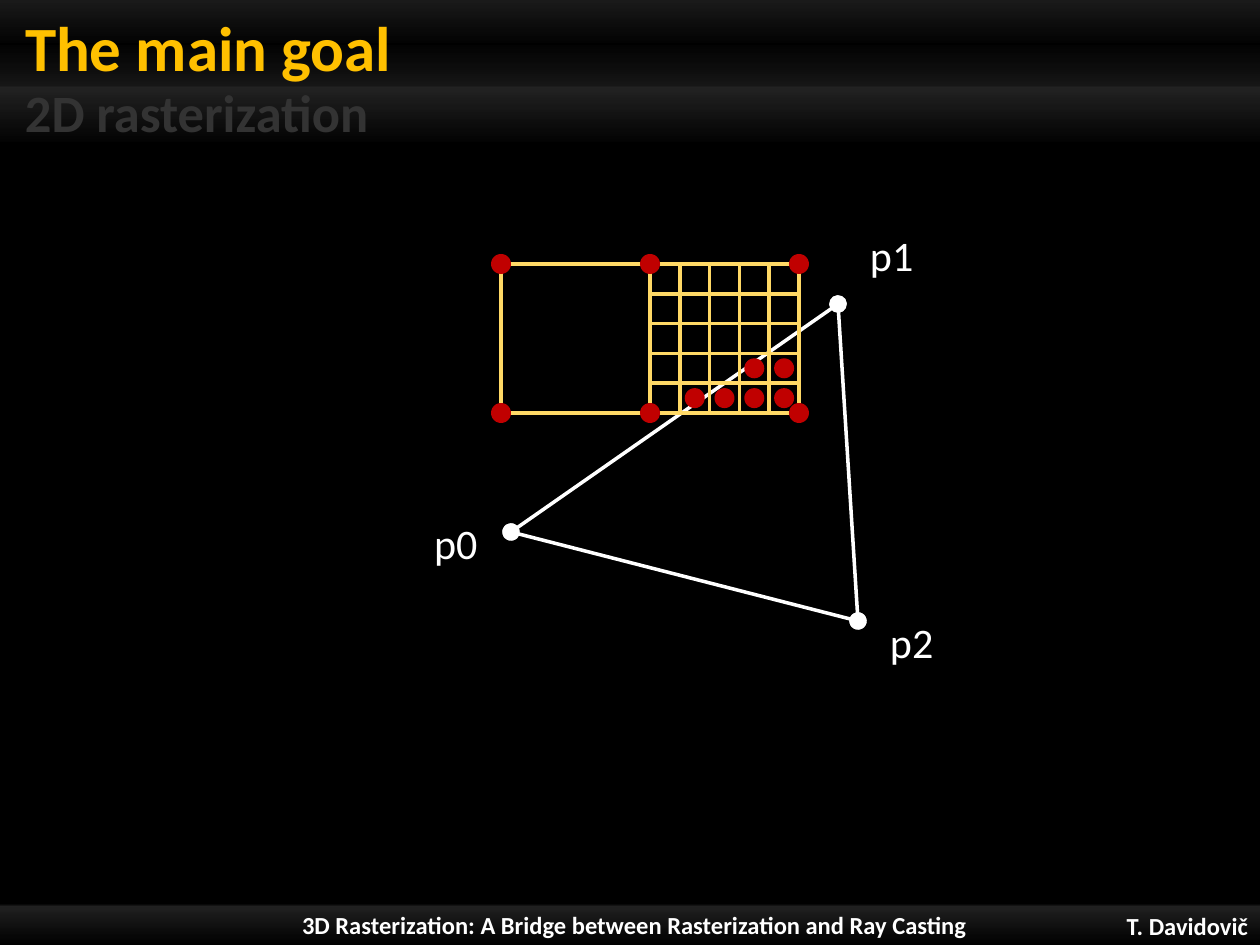
"""Build the 2D rasterization slide: a triangle over a refined grid of samples."""
from lxml import etree
from pptx import Presentation
from pptx import util as u
from pptx.dml.color import RGBColor
from pptx.enum import shapes, text
from pptx.oxml.ns import qn

PX = 914400 / 126
WHITE = RGBColor(0xFF, 0xFF, 0xFF)
BLACK = RGBColor(0, 0, 0)
AMBER = RGBColor(0xFF, 0xC0, 0x00)
GRID = RGBColor(0xFF, 0xD9, 0x66)
RED = RGBColor(0xC0, 0, 0)
DIM = RGBColor(0x33, 0x33, 0x33)

LEFT, CENTER, RIGHT = text.PP_ALIGN.LEFT, text.PP_ALIGN.CENTER, text.PP_ALIGN.RIGHT
MIDDLE, BOTTOM, TOP = text.MSO_ANCHOR.MIDDLE, text.MSO_ANCHOR.BOTTOM, text.MSO_ANCHOR.TOP

# top, height, (stop percent, white opacity percent)
BANDS = [
    (902, 43, [(5, 0), (10, 8), (11, 13), (100, 0)]),
    (0, 143, [(0, 10), (31, 0), (60, 8), (61, 13), (100, 0)]),
]
# words, (left, top, width, height), size, bold, colour, align, anchor, insets
TEXTS = [
    ("T. Davidovič", (1027, 906, 233, 39), 14, True, WHITE, RIGHT, MIDDLE, (12, 6)),
    ("3D Rasterization: A Bridge between Rasterization and Ray Casting",
     (176, 903, 917, 43), 14, True, WHITE, CENTER, MIDDLE, (12, 6)),
    ("The main goal", (0, 0, 1037, 84), 36, True, AMBER, LEFT, BOTTOM, (25, 0)),
    ("2D rasterization", (0, 82, 845, 59), 30, True, DIM, LEFT, MIDDLE, (25, 0)),
]
CORNERS = {"p0": (511, 532), "p1": (838, 304), "p2": (858, 621)}
LABELS = {"p0": (422, 512), "p1": (858, 224), "p2": (878, 611)}
EDGES = [("p0", "p2"), ("p1", "p0"), ("p1", "p2")]

GRID_LEFT, GRID_TOP, BLOCK, CELLS, DOT = 501, 264, 149, 5, 20
COVERED_CELLS = [(1, 4), (2, 4), (3, 4), (4, 4), (4, 3), (3, 3)]


def emu(px):
    return u.Emu(round(px * PX))


def add_band(page, top, height, stops):
    band = page.shapes.add_shape(shapes.MSO_SHAPE.RECTANGLE, 0, emu(top), emu(1260), emu(height))
    band.shadow.inherit = False
    band.line.fill.background()
    band.fill.gradient()
    band.fill.gradient_angle = 270
    stop_list = band._element.spPr.find(qn("a:gradFill")).find(qn("a:gsLst"))
    for old in list(stop_list):
        stop_list.remove(old)
    for percent, opacity in stops:
        stop = etree.SubElement(stop_list, qn("a:gs"), pos=str(percent * 1000))
        color = etree.SubElement(stop, qn("a:srgbClr"), val="FFFFFF")
        etree.SubElement(color, qn("a:alpha"), val=str(opacity * 1000))


def add_text(page, words, place, size, bold, color, align, anchor, insets, fit=False):
    box = page.shapes.add_textbox(*map(emu, place))
    frame = box.text_frame
    frame.word_wrap = not fit
    if fit:
        frame.auto_size = text.MSO_AUTO_SIZE.SHAPE_TO_FIT_TEXT
    frame.vertical_anchor = anchor
    frame.margin_left, frame.margin_right = emu(insets[0]), emu(12)
    frame.margin_top = frame.margin_bottom = emu(insets[1])
    para = frame.paragraphs[0]
    para.text = words
    para.alignment = align
    para.font.name, para.font.size, para.font.bold = "Calibri", u.Pt(size), bold
    para.font.color.rgb = color


def add_line(page, start, end, color, oval_ends=False):
    line = page.shapes.add_connector(shapes.MSO_CONNECTOR.STRAIGHT, *map(emu, (*start, *end)))
    line.line.color.rgb = color
    line.line.width = u.Pt(2)
    if oval_ends:
        outline = line._element.spPr.find(qn("a:ln"))
        for tag in ("a:headEnd", "a:tailEnd"):
            etree.SubElement(outline, qn(tag), type="oval", w="lg", len="lg")
    etree.SubElement(line._element.spPr, qn("a:effectLst"))


def add_dot(page, x, y):
    dot = page.shapes.add_shape(
        shapes.MSO_SHAPE.OVAL, emu(x - DOT / 2), emu(y - DOT / 2), emu(DOT), emu(DOT))
    dot.shadow.inherit = False
    dot.fill.solid()
    dot.fill.fore_color.rgb = RED
    dot.line.fill.background()


def add_grid(page):
    middle, right, bottom = GRID_LEFT + BLOCK, GRID_LEFT + 2 * BLOCK, GRID_TOP + BLOCK
    cell = BLOCK / CELLS
    add_line(page, (GRID_LEFT, GRID_TOP), (GRID_LEFT, bottom), GRID)
    for y in (GRID_TOP, bottom):
        add_line(page, (GRID_LEFT, y), (middle, y), GRID)
    for step in range(CELLS + 1):
        x = middle + step * cell
        add_line(page, (x, GRID_TOP), (x, bottom), GRID)
    for step in range(CELLS + 1):
        y = GRID_TOP + step * cell
        add_line(page, (middle, y), (right, y), GRID)
    for x in (GRID_LEFT, middle, right):
        for y in (GRID_TOP, bottom):
            add_dot(page, x, y)
    for column, row in COVERED_CELLS:
        add_dot(page, middle + (column + 0.5) * cell, GRID_TOP + (row + 0.5) * cell)


def main():
    deck = Presentation()
    deck.slide_width, deck.slide_height = emu(1260), emu(945)
    page = deck.slides.add_slide(deck.slide_layouts[6])
    page.background.fill.solid()
    page.background.fill.fore_color.rgb = BLACK
    for band in BANDS:
        add_band(page, *band)
    for item in TEXTS:
        add_text(page, *item)
    for start, end in EDGES:
        add_line(page, CORNERS[start], CORNERS[end], WHITE, oval_ends=True)
    add_grid(page)
    for name, place in LABELS.items():
        add_text(page, name, (*place, 69, 63), 24, False, WHITE, LEFT, TOP, (12, 6), fit=True)
    deck.save("out.pptx")


if __name__ == "__main__":
    main()
